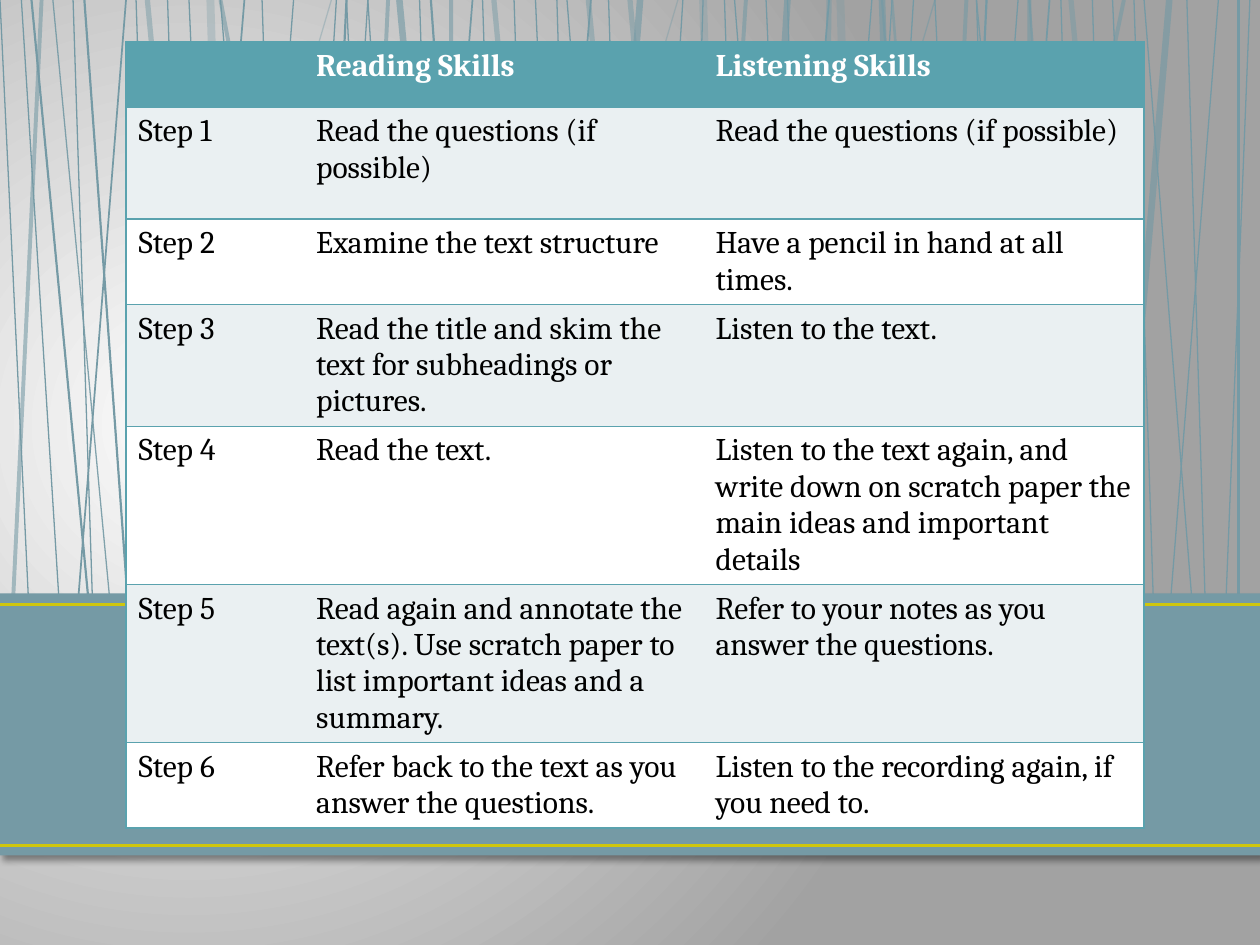
from dataclasses import dataclass

from lxml import etree
from pptx import Presentation
from pptx.dml.color import RGBColor
from pptx.enum.shapes import MSO_CONNECTOR, MSO_SHAPE
from pptx.oxml.ns import qn
from pptx.util import Inches, Pt

STRAIGHT = MSO_CONNECTOR.STRAIGHT
RECTANGLE = MSO_SHAPE.RECTANGLE


@dataclass(frozen=True)
class Theme:
    glow: str = "FCFCFC"
    backdrop: str = "A2A2A2"
    slate: str = "759AA5"
    accent: str = "CFC60D"
    teal: str = "5AA2AE"
    tint: str = "EAF0F2"
    white: str = "FFFFFF"
    black: str = "000000"
    font: str = "Cambria"
    text_size: int = 18
    rule: float = 1.5
    cell_border: float = 1


# (line width in points, opacity in percent): (top x, bottom x) of each reed
REEDS = {
    (0.75, 100): [
        (2.08, 2.25), (1.75, 2.17), (2.33, 1.92), (0, 0.25), (0.17, 0.5), (0.58, 0.75),
        (2.67, 2.34), (2.92, 2.58), (1.5, 1.73), (1.08, 1.25), (1.33, 1.5), (4.83, 5),
        (4.5, 4.92), (2.75, 3), (2.92, 3.25), (4.42, 4.58), (3.33, 3.5), (5.42, 5.09),
        (5.58, 5.42), (4.25, 4.48), (3.83, 4), (4.08, 4.25), (5.83, 6.25), (6.92, 6.5),
        (6.25, 6.42), (7.25, 6.92), (7.08, 6.75), (6.08, 6.31), (5.75, 5.92), (7.42, 7.67),
        (7.75, 7.92), (8.42, 8.58), (8.67, 8.83), (9.42, 9.58), (9.08, 9.5), (9.67, 9.25),
        (9, 9.17), (9.92, 9.71), (8.83, 9.06), (8.08, 7.67)],
    (0.75, 90): [(0.42, 0.92), (7.75, 8.25)],
    (0.75, 56): [(7.42, 5.87)],
    (0.75, 39): [(2.63, 1.08), (5.38, 3.83)],
    (1, 100): [(1, 0.58), (1.94, 1.5), (3.75, 3.33), (4.69, 4.25), (6.58, 6.14),
               (8.33, 7.92)],
    (1.25, 100): [(0.25, 0.75), (0.67, 1.05), (2.75, 2.5), (3.42, 3.8), (7.83, 7.58),
                  (9.83, 9.83)],
    (1.25, 72): [(8.17, 8.55), (7, 7.39)],
    (1.5, 58): [(7.08, 7.5)],
    (2.25, 58): [(0.33, 0.08), (1.75, 2.75), (3.08, 2.83), (3.58, 3.58), (5.92, 5.58),
                 (7.67, 7.42), (8.17, 8.17), (8.92, 7.83)],
    (3, 47): [(1.17, 1.67), (3.92, 4.42), (4.67, 5.17), (8.5, 9), (6.58, 6.5), (5, 5.5)],
    (3.75, 63): [(5.08, 4.67), (3.17, 3.67), (9.28, 8.83), (7, 7.17), (6.25, 5.92)],
    (4.5, 30): [(1.67, 1.83), (6.67, 6.83), (5.58, 5.75)],
}
REED_BOTTOM = 5.27

COLUMN_WIDTHS = [1.41, 3.17, 3.5]
ROW_HEIGHTS = [0.52, 0.89] + [0.52] * 5
HEADER = ("", "Reading Skills", "Listening Skills")
STEPS = [
    ("Read the questions (if possible)", "Read the questions (if possible)"),
    ("Examine the text structure", "Have a pencil in hand at all times."),
    ("Read the title and skim the text for subheadings or pictures.", "Listen to the text."),
    ("Read the text.",
     "Listen to the text again, and write down on scratch paper the main ideas and "
     "important details"),
    ("Read again and annotate the text(s). Use scratch paper to list important ideas "
     "and a summary.",
     "Refer to your notes as you answer the questions."),
    ("Refer back to the text as you answer the questions.",
     "Listen to the recording again, if you need to."),
]


def add_node(parent, tag, **attributes):
    values = {key: str(value) for key, value in attributes.items()}
    return etree.SubElement(parent, qn(tag), values)


def add_colour(parent, colour, opacity=100):
    node = add_node(parent, "a:srgbClr", val=colour)
    if opacity < 100:
        add_node(node, "a:alpha", val=opacity * 1000)


class SlideBuilder:
    def __init__(self, slide, theme):
        self.slide = slide
        self.theme = theme

    def background(self):
        """Radial gradient that brightens towards the left edge."""
        fill = self.slide.background.fill
        fill.gradient()
        for stop, colour in zip(fill.gradient_stops, (self.theme.glow, self.theme.backdrop)):
            stop.color.rgb = RGBColor.from_string(colour)
        gradient = self.slide.element.find(".//" + qn("a:gradFill"))
        gradient.remove(gradient.find(qn("a:lin")))
        circle = add_node(gradient, "a:path", path="circle")
        add_node(circle, "a:fillToRect", l=15000, t=50000, r=85000, b=60000)

    def line(self, start, end, colour, width, opacity=100):
        points = [Inches(value) for value in (*start, *end)]
        connector = self.slide.shapes.add_connector(STRAIGHT, *points)
        connector.line.width = Pt(width)
        connector.line.color.rgb = RGBColor.from_string(colour)
        properties = connector.element.spPr
        if opacity < 100:
            node = properties.find(".//" + qn("a:srgbClr"))
            add_node(node, "a:alpha", val=opacity * 1000)
        add_node(properties, "a:effectLst")

    def band(self, left, top, width, height):
        """Full-width panel with a soft shadow below it."""
        box = [Inches(value) for value in (left, top, width, height)]
        panel = self.slide.shapes.add_shape(RECTANGLE, *box)
        panel.fill.solid()
        panel.fill.fore_color.rgb = RGBColor.from_string(self.theme.slate)
        panel.line.fill.background()
        panel.shadow.inherit = False
        effects = panel.element.spPr.find(qn("a:effectLst"))
        shadow = add_node(effects, "a:outerShdw", blurRad=Pt(4), dist=Pt(3),
                          dir=45 * 60000, algn="tl", rotWithShape=0)
        add_colour(shadow, self.theme.black, 40)

    def cell_borders(self, cell, visible_sides):
        properties = cell._tc.get_or_add_tcPr()
        for side in "LRTB":
            border = add_node(properties, f"a:ln{side}", w=Pt(self.theme.cell_border))
            if side in visible_sides:
                add_colour(add_node(border, "a:solidFill"), self.theme.teal)
            else:
                add_node(border, "a:noFill")

    def cell(self, cell, text, fill, colour, bold):
        cell.fill.solid()
        cell.fill.fore_color.rgb = RGBColor.from_string(fill)
        cell.text = text
        font = cell.text_frame.paragraphs[0].font
        style = {"name": self.theme.font, "size": Pt(self.theme.text_size), "bold": bold}
        for run in cell.text_frame.paragraphs[0].runs:
            font = run.font
        for attribute, value in style.items():
            setattr(font, attribute, value)
        font.color.rgb = RGBColor.from_string(colour)

    def table(self, left, top, height, rows):
        theme = self.theme
        frame = self.slide.shapes.add_table(
            len(rows), len(COLUMN_WIDTHS), Inches(left), Inches(top),
            Inches(sum(COLUMN_WIDTHS)), Inches(height))
        table = frame.table
        table.horz_banding = False
        for column, width in zip(table.columns, COLUMN_WIDTHS):
            column.width = Inches(width)
        for row, row_height in zip(table.rows, ROW_HEIGHTS):
            row.height = Inches(row_height)
        frame.height = Inches(height)
        outer_sides = {0: "L", len(COLUMN_WIDTHS) - 1: "R"}
        for row_index, texts in enumerate(rows):
            is_header = row_index == 0
            band_fill = theme.tint if row_index % 2 else theme.white
            fill = theme.teal if is_header else band_fill
            colour = theme.white if is_header else theme.black
            for column_index, text in enumerate(texts):
                cell = table.cell(row_index, column_index)
                self.cell_borders(cell, "TB" + outer_sides.get(column_index, ""))
                self.cell(cell, text, fill, colour, is_header)


def main():
    presentation = Presentation()
    presentation.slide_width = Inches(10)
    presentation.slide_height = Inches(7.5)
    theme = Theme()
    builder = SlideBuilder(presentation.slides.add_slide(presentation.slide_layouts[6]), theme)

    builder.background()
    for (width, opacity), reeds in REEDS.items():
        for top_x, bottom_x in reeds:
            builder.line((top_x, 0), (bottom_x, REED_BOTTOM), theme.slate, width, opacity)
    builder.band(0, 4.71, 10, 2.08)
    for y in (4.8, 6.71):
        builder.line((0, y), (10, y), theme.accent, theme.rule)

    steps = [(f"Step {number}", *skills) for number, skills in enumerate(STEPS, 1)]
    builder.table(1, 0.33, 6.41, [HEADER, *steps])
    presentation.save("out.pptx")


if __name__ == "__main__":
    main()
